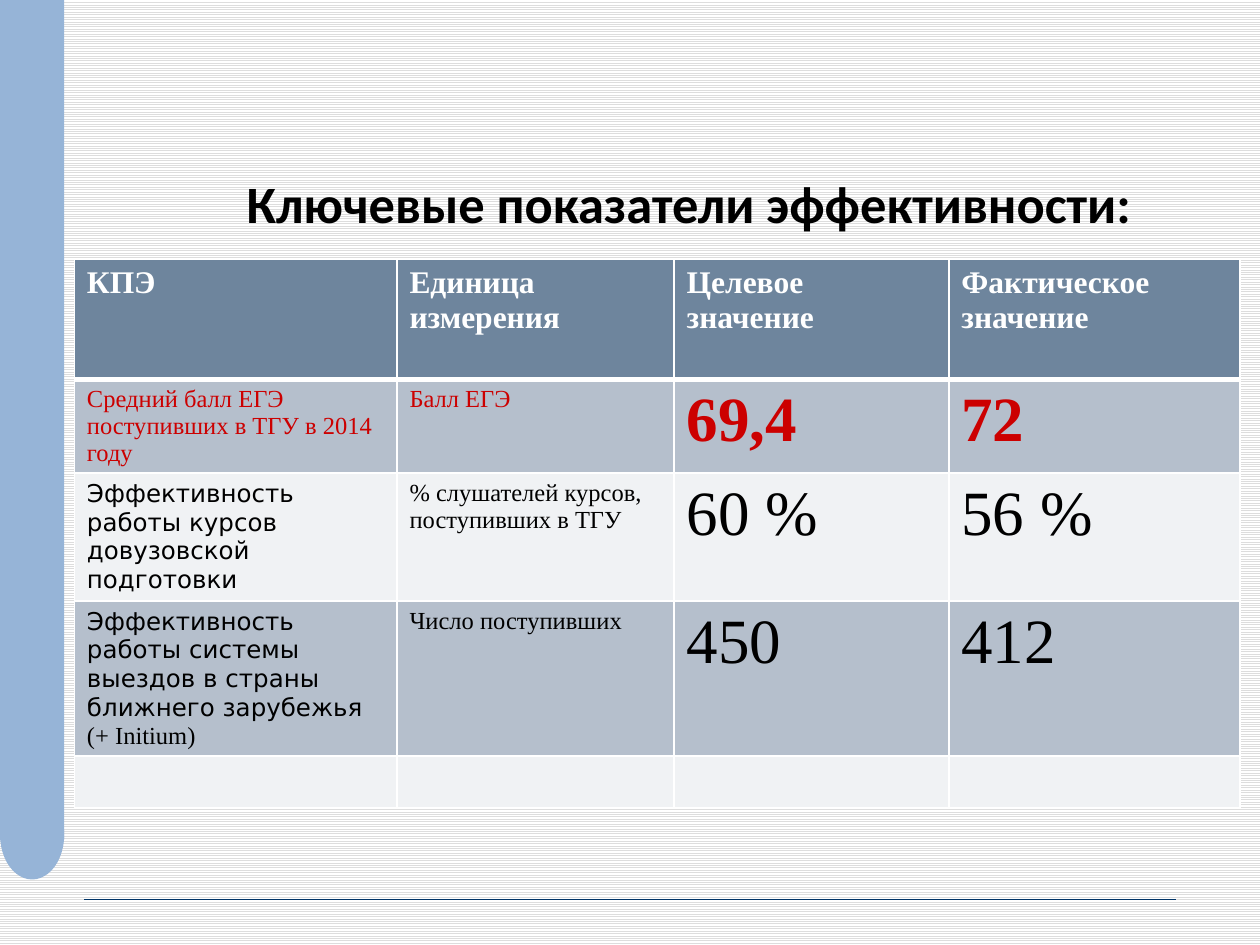
from pptx import Presentation
from pptx.dml.color import RGBColor as RGB
from pptx.enum.dml import MSO_PATTERN as Pat
from pptx.enum.shapes import MSO_CONNECTOR as Conn, MSO_SHAPE as Kind
from pptx.enum.text import MSO_ANCHOR as Anchor, PP_ALIGN as Align
from pptx.oxml import parse_xml
from pptx.oxml.ns import nsdecls
from pptx.util import Inches, Pt

BLACK = RGB(0x00, 0x00, 0x00)
WHITE = RGB(0xFF, 0xFF, 0xFF)
GREY = RGB(0xDD, 0xDD, 0xDD)
NAVY = RGB(0x00, 0x33, 0x66)
SKY = RGB(0x96, 0xB4, 0xD7)
SLATE = RGB(0x6E, 0x85, 0x9D)
STEEL = RGB(0xB5, 0xBF, 0xCC)
PALE = RGB(0xF0, 0xF2, 0xF4)
RED = RGB(0xCC, 0x00, 0x00)

SERIF = "Times New Roman"
SANS = "DejaVu Sans"

COLS = [2.56, 2.2, 2.18, 2.31]
ROWS = [0.95, 0.74, 1.01, 1.23, 0.41]
FILLS = [SLATE, STEEL, PALE, STEEL, PALE]
HEAD = ["КПЭ", "Единица измерения", "Целевое значение", "Фактическое значение"]
BODY = [
    ([("Средний балл ЕГЭ поступивших в ТГУ в 2014 году", SERIF)],
     "Балл ЕГЭ", "69,4", "72", RED, True),
    ([("Эффективность работы курсов довузовской подготовки", SANS)],
     "% слушателей курсов, поступивших в ТГУ", "60 %", "56 %", BLACK, False),
    ([("Эффективность работы системы выездов в страны ближнего зарубежья", SANS),
      ("(+ Initium)", SERIF)],
     "Число поступивших", "450", "412", BLACK, False),
]


def add_run(para, text, size, color, bold=False, face=SERIF):
    """Add one formatted run to a paragraph."""
    run = para.add_run()
    run.text = text
    font = run.font
    font.name, font.size, font.bold = face, Pt(size), bold
    font.color.rgb = color


def add_back(slide):
    """Fill the slide with thin grey stripes."""
    fill = slide.background.fill
    fill.patterned()
    fill.pattern = Pat.LIGHT_HORIZONTAL
    fill.fore_color.rgb = GREY
    fill.back_color.rgb = WHITE


def add_block(slide, kind, top, height):
    """Add one part of the left band."""
    block = slide.shapes.add_shape(
        kind, 0, Inches(top), Inches(0.51), Inches(height))
    block.shadow.inherit = False
    block.fill.solid()
    block.fill.fore_color.rgb = SKY
    block.line.fill.background()


def add_rule(slide):
    """Add the hairline at the foot."""
    rule = slide.shapes.add_connector(
        Conn.STRAIGHT, Inches(0.67), Inches(7.14), Inches(9.33), Inches(7.14))
    rule.line.color.rgb = NAVY
    rule.line.width = Pt(0.25)
    rule._element.spPr.append(parse_xml(f"<a:effectLst {nsdecls('a')}/>"))


def set_title(slide):
    """Place and write the title."""
    title = slide.shapes.title
    title.left, title.top = Inches(0.94), Inches(1.31)
    title.width, title.height = Inches(9.06), Inches(0.97)
    frame = title.text_frame
    frame.vertical_anchor = Anchor.TOP
    para = frame.paragraphs[0]
    para.alignment = Align.CENTER
    add_run(para, "Ключевые показатели эффективности:", 30, BLACK, True, "Calibri")


def set_edges(cell, top, base):
    """Give a cell white borders."""
    props = cell._tc.get_or_add_tcPr()
    for side, width in zip("LRTB", (1, 1, top, base)):
        props.append(parse_xml(
            f'<a:ln{side} {nsdecls("a")} w="{Pt(width)}"><a:solidFill>'
            f'<a:srgbClr val="{WHITE}"/></a:solidFill></a:ln{side}>'))


def add_grid(slide):
    """Add the table with its fills and borders."""
    grid = slide.shapes.add_table(
        len(ROWS), len(COLS), Inches(0.59), Inches(2.06),
        Inches(sum(COLS)), Inches(sum(ROWS))).table
    for col, width in zip(grid.columns, COLS):
        col.width = Inches(width)
    for i, (row, height) in enumerate(zip(grid.rows, ROWS)):
        row.height = Inches(height)
        for cell in row.cells:
            set_edges(cell, 3 if i == 1 else 1, 3 if i == 0 else 1)
            cell.fill.solid()
            cell.fill.fore_color.rgb = FILLS[i]
    return grid


def fill_grid(grid):
    """Write the heading and the measures."""
    for j, text in enumerate(HEAD):
        add_run(grid.cell(0, j).text_frame.paragraphs[0], text, 18, WHITE, True)
    for i, (name, unit, goal, fact, color, bold) in enumerate(BODY, 1):
        frame = grid.cell(i, 0).text_frame
        for k, (text, face) in enumerate(name):
            para = frame.add_paragraph() if k else frame.paragraphs[0]
            add_run(para, text, 14, color, face=face)
        add_run(grid.cell(i, 1).text_frame.paragraphs[0], unit, 14, color)
        for j, text in enumerate((goal, fact), 2):
            add_run(grid.cell(i, j).text_frame.paragraphs[0], text, 36, color, bold)


def main():
    """Build and save the slide."""
    deck = Presentation()
    deck.slide_width, deck.slide_height = Inches(10), Inches(7.5)
    slide = deck.slides.add_slide(deck.slide_layouts[5])
    add_back(slide)
    add_rule(slide)
    add_block(slide, Kind.RECTANGLE, 0, 6.66)
    add_block(slide, Kind.OVAL, 6.27, 0.71)
    set_title(slide)
    fill_grid(add_grid(slide))
    deck.save("out.pptx")


if __name__ == "__main__":
    main()
